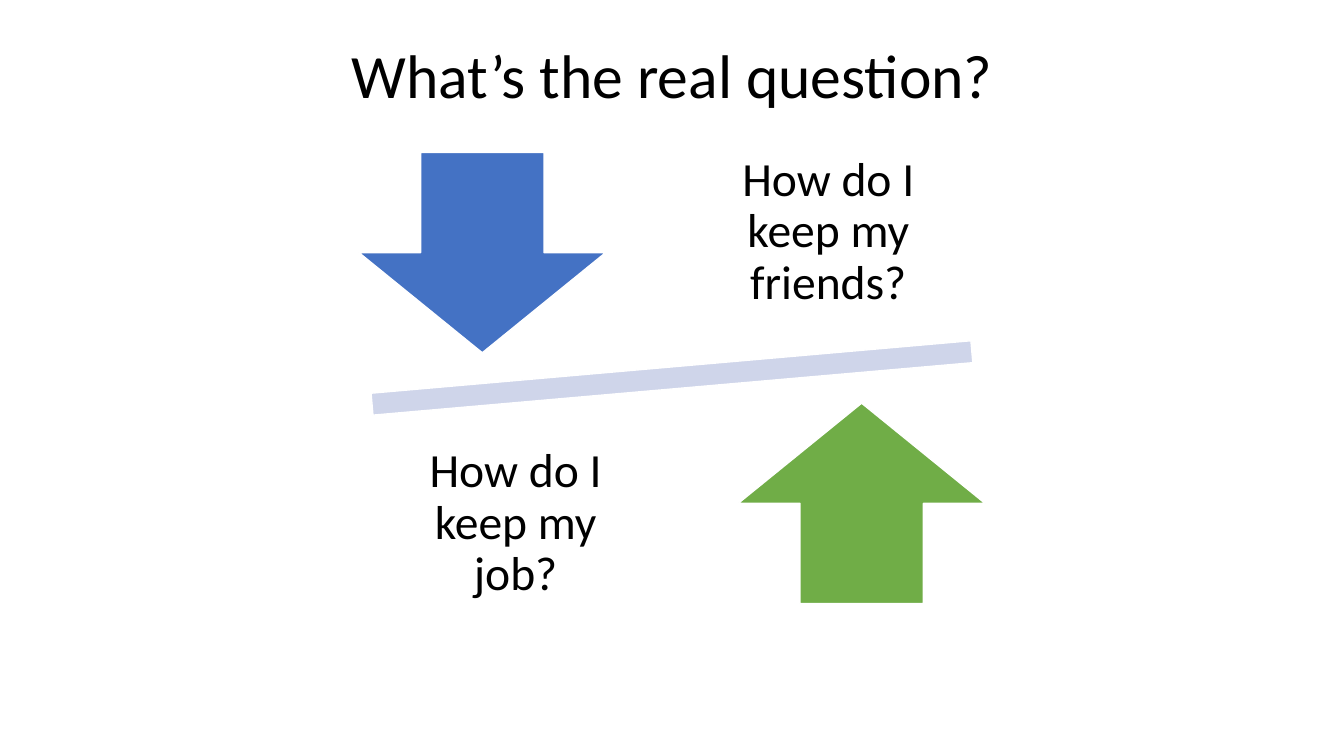
from pptx import Presentation
from pptx.dml.color import RGBColor
from pptx.enum.shapes import MSO_SHAPE
from pptx.enum.text import MSO_ANCHOR, PP_ALIGN
from pptx.util import Cm, Pt

MINUS = MSO_SHAPE.MATH_MINUS
DOWN_ARROW = MSO_SHAPE.DOWN_ARROW
UP_ARROW = MSO_SHAPE.UP_ARROW
TOP = MSO_ANCHOR.TOP
MIDDLE = MSO_ANCHOR.MIDDLE
CENTER = PP_ALIGN.CENTER

COLORS = {
    "text": "000000",
    "outline": "FFFFFF",
    "beam": "CFD5EA",
    "down": "4472C4",
    "up": "70AD47",
}
TITLE_BOX = (2.34, 1.02, 29.21, 3.68)
BALANCE_BOX = (6.61, 3.2, 20.65, 12.65)
BEAM_HEIGHT = 2.36
BEAM_ROTATION = 355
ARROW_SIZE = (6.22, 5.05)
ARROW_OFFSET = (4.78, 3.16)
QUESTION_SIZE = (6.65, 5.31)
QUESTION_OFFSET = (3.94, 3.67)
INSET = Cm(0.66)
QUESTION_FRAME = {
    "margin_left": INSET,
    "margin_top": INSET,
    "margin_right": INSET,
    "margin_bottom": INSET,
    "vertical_anchor": MIDDLE,
    "word_wrap": True,
}
TITLE_FRAME = {"vertical_anchor": TOP, "word_wrap": True}
PARAGRAPH = {"alignment": CENTER, "line_spacing": 0.9}
SIDES = [
    (-1, DOWN_ARROW, "down", "How do I keep my friends?"),
    (1, UP_ARROW, "up", "How do I keep my job?"),
]


def apply_format(target, values):
    for name, value in values.items():
        setattr(target, name, value)


def centered_box(center, size):
    left, top = (middle - length / 2 for middle, length in zip(center, size))
    return [Cm(value) for value in (left, top, *size)]


def write_text(shape, text, size, frame_format):
    frame = shape.text_frame
    apply_format(frame, frame_format)
    frame.text = text
    paragraph = frame.paragraphs[0]
    apply_format(paragraph, PARAGRAPH)
    font = paragraph.runs[0].font
    apply_format(font, {"name": "Calibri", "size": Pt(size)})
    font.color.rgb = RGBColor.from_string(COLORS["text"])


def add_filled_shape(slide, kind, center, size, color):
    shape = slide.shapes.add_shape(kind, *centered_box(center, size))
    shape.shadow.inherit = False
    shape.fill.solid()
    shape.fill.fore_color.rgb = RGBColor.from_string(COLORS[color])
    shape.line.color.rgb = RGBColor.from_string(COLORS["outline"])
    shape.line.width = Pt(1)
    return shape


def add_title(slide, box):
    title = slide.shapes.title
    left, top, width, height = (Cm(value) for value in box)
    apply_format(title, {"left": left, "top": top, "width": width, "height": height})
    write_text(title, "What’s the real question?", 44, TITLE_FRAME)


def add_balance(slide, box):
    left, top, width, height = box
    middle_x, middle_y = left + width / 2, top + height / 2
    beam = add_filled_shape(
        slide, MINUS, (middle_x, middle_y), (width, BEAM_HEIGHT), "beam"
    )
    beam.rotation = BEAM_ROTATION
    for side, arrow, color, question in SIDES:
        arrow_x, arrow_y = (side * offset for offset in ARROW_OFFSET)
        arrow_center = (middle_x + arrow_x, middle_y + arrow_y)
        add_filled_shape(slide, arrow, arrow_center, ARROW_SIZE, color)
        text_x, text_y = (side * offset for offset in QUESTION_OFFSET)
        text_center = (middle_x - text_x, middle_y + text_y)
        textbox = slide.shapes.add_textbox(*centered_box(text_center, QUESTION_SIZE))
        write_text(textbox, question, 34, QUESTION_FRAME)


def main():
    presentation = Presentation()
    presentation.slide_width = Cm(33.87)
    presentation.slide_height = Cm(19.05)
    slide = presentation.slides.add_slide(presentation.slide_layouts[5])
    add_balance(slide, BALANCE_BOX)
    add_title(slide, TITLE_BOX)
    presentation.save("out.pptx")


if __name__ == "__main__":
    main()
